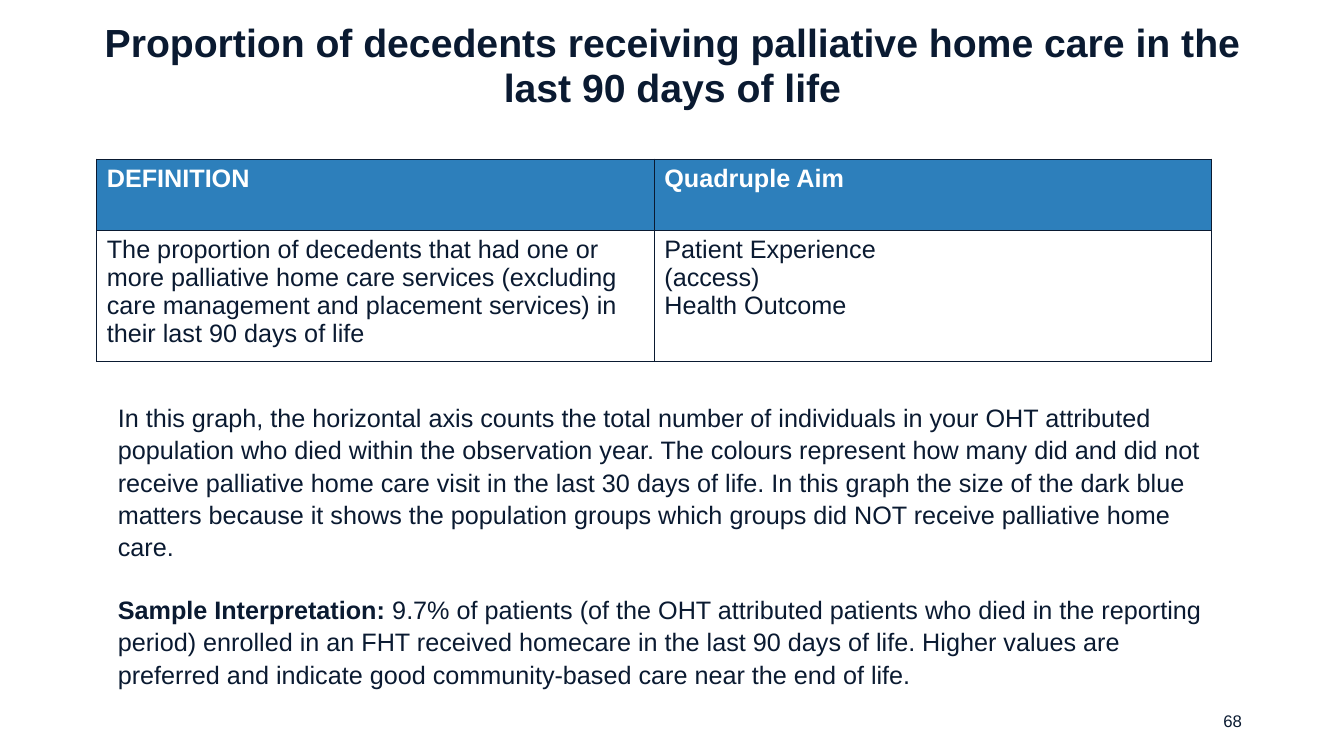
from dataclasses import dataclass

from lxml.etree import SubElement
from pptx import Presentation
from pptx.dml.color import RGBColor
from pptx.enum.text import MSO_ANCHOR, PP_ALIGN
from pptx.oxml.ns import qn
from pptx.util import Cm, Pt


@dataclass(frozen=True)
class Theme:
    font: str = "Arial"
    ink: str = "0A1A31"
    header: str = "2D7FBB"
    white: str = "FFFFFF"
    title_size: int = 28
    body_size: int = 18
    number_size: int = 12


THEME = Theme()

TITLE = "Proportion of decedents receiving palliative home care in the last 90 days of life"
NUMBER = "68"
DEFINITION_ROWS = [
    ["DEFINITION", "Quadruple Aim"],
    [
        "The proportion of decedents that had one or more palliative home care services "
        "(excluding care management and placement services) in their last 90 days of life",
        "Patient Experience \v(access)\nHealth Outcome",
    ],
]
EXPLANATION = [
    [
        ("In this graph, the horizontal axis counts the total number of individuals in your "
         "OHT attributed population who died within the observation year. The colours represent "
         "how many did and did not receive palliative home care visit in the last 30 days of "
         "life. In this graph the size of the dark blue matters because it shows the population "
         "groups which groups did NOT receive palliative home care.", False),
    ],
    [
        ("Sample Interpretation: ", True),
        ("9.7% of patients (of the OHT attributed patients who died in the reporting period) "
         "enrolled in an FHT received homecare in the last 90 days of life. Higher values are "
         "preferred and indicate good community-based care near the end of life.", False),
    ],
]

TABLE_LEFT, TABLE_TOP = 2.44, 4.01
COLUMN_WIDTH = 14.05
ROW_HEIGHTS = [1.79, 3.29]


def style(span, size, color=THEME.ink, bold=False):
    span.font.name = THEME.font
    span.font.size = Pt(size)
    span.font.bold = bold
    span.font.color.rgb = RGBColor.from_string(color)


def add_text(page, left, top, width, height, paragraphs, size,
             align=PP_ALIGN.LEFT, anchor=MSO_ANCHOR.TOP, spacing=1.0, gap=0):
    box = page.shapes.add_textbox(Cm(left), Cm(top), Cm(width), Cm(height))
    frame = box.text_frame
    frame.word_wrap = True
    frame.vertical_anchor = anchor
    for index, spans in enumerate(paragraphs):
        para = frame.add_paragraph() if index else frame.paragraphs[0]
        para.alignment = align
        para.line_spacing = spacing
        if index:
            para.space_before = Pt(gap)
        for text, bold in spans:
            span = para.add_run()
            span.text = text
            style(span, size, bold=bold)


def add_borders(cell):
    properties = cell._tc.get_or_add_tcPr()
    for position, side in enumerate(("a:lnL", "a:lnR", "a:lnT", "a:lnB")):
        line = properties.makeelement(qn(side), {"w": str(Pt(1))})
        fill = SubElement(line, qn("a:solidFill"))
        SubElement(fill, qn("a:srgbClr"), val=THEME.ink)
        properties.insert(position, line)


def add_definition_table(page):
    columns = len(DEFINITION_ROWS[0])
    table = page.shapes.add_table(
        len(DEFINITION_ROWS), columns, Cm(TABLE_LEFT), Cm(TABLE_TOP),
        Cm(COLUMN_WIDTH * columns), Cm(sum(ROW_HEIGHTS))).table
    for column in table.columns:
        column.width = Cm(COLUMN_WIDTH)
    for row_index, texts in enumerate(DEFINITION_ROWS):
        is_header = row_index == 0
        table.rows[row_index].height = Cm(ROW_HEIGHTS[row_index])
        for column_index, text in enumerate(texts):
            cell = table.cell(row_index, column_index)
            cell.text_frame.text = text
            cell.fill.solid()
            cell.fill.fore_color.rgb = RGBColor.from_string(
                THEME.header if is_header else THEME.white)
            add_borders(cell)
            for para in cell.text_frame.paragraphs:
                for span in para.runs:
                    style(span, THEME.body_size,
                          THEME.white if is_header else THEME.ink, is_header)


def main():
    deck = Presentation()
    deck.slide_width, deck.slide_height = Cm(33.87), Cm(19.05)
    page = deck.slides.add_slide(deck.slide_layouts[6])
    add_text(page, 23.93, 17.65, 7.62, 1.02, [[(NUMBER, False)]], THEME.number_size,
             align=PP_ALIGN.RIGHT, anchor=MSO_ANCHOR.MIDDLE)
    add_text(page, 1.96, 0.61, 29.97, 2.13, [[(TITLE, True)]], THEME.title_size,
             align=PP_ALIGN.CENTER, anchor=MSO_ANCHOR.MIDDLE, spacing=0.96)
    add_definition_table(page)
    add_text(page, 2.72, 9.96, 27.81, 7.19, EXPLANATION, THEME.body_size,
             spacing=1.07, gap=21.6)
    deck.save("out.pptx")


if __name__ == "__main__":
    main()
